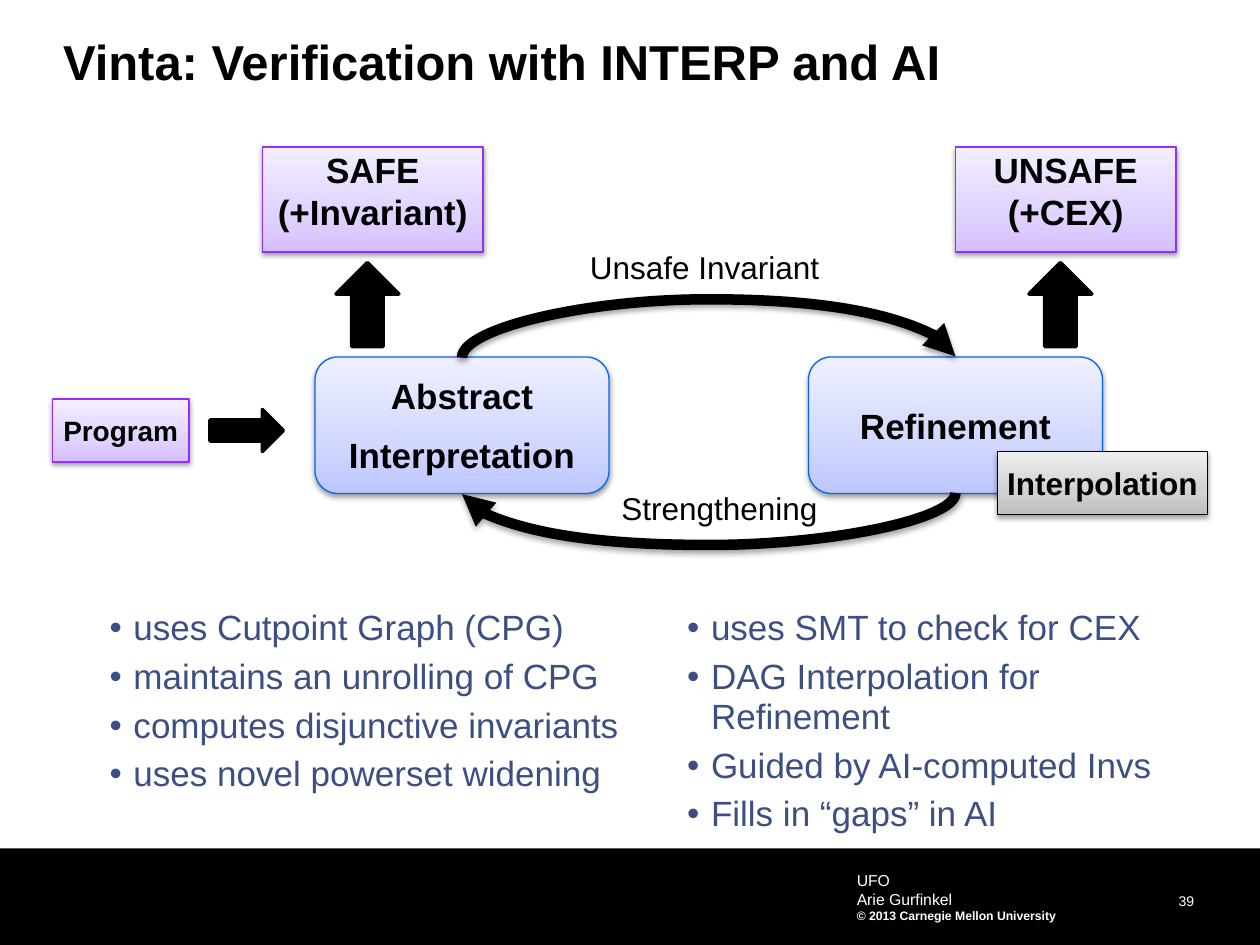
from copy import deepcopy

from lxml.etree import SubElement
from pptx import Presentation
from pptx.dml.color import RGBColor
from pptx.enum.shapes import MSO_CONNECTOR as Link, MSO_SHAPE as Shape
from pptx.enum.text import MSO_ANCHOR as Anchor, MSO_AUTO_SIZE as Fit, PP_ALIGN as Align
from pptx.oxml.ns import qn
from pptx.util import Inches, Pt

CELL = Inches(1) / 12  # the slide is a grid of 120 x 90 cells
BLACK, WHITE, NAVY = "000000", "FFFFFF", "3C4F82"

# Gradient colours from bottom to top, then the outline
BLUE = ("BDC6FF", "D1D7FF", "EEF0FF", "0064F9")
PURPLE = ("D4BFFF", "E0D2FF", "F3EEFF", "962DFE")
GRAY = ("BDBDBD", "D1D1D1", "EEEEEE", BLACK)


def rgb(code):
    return RGBColor.from_string(code)


def cells(*counts):
    return [round(count * CELL) for count in counts]


def apply(target, values):
    for name, value in values.items():
        setattr(target, name, value)


def add_node(parent, tag, **attributes):
    return SubElement(parent, qn(tag), {k: str(v) for k, v in attributes.items()})


def add_shadow(effects, opacity, distance):
    shadow = add_node(effects, "a:outerShdw", blurRad=40000, dist=distance,
                      dir=5400000, rotWithShape=0)
    color = add_node(shadow, "a:srgbClr", val=BLACK)
    add_node(color, "a:alpha", val=opacity * 1000)


def write(frame, lines, size, color=BLACK, bold=False, paragraph=None,
          gap=0, margin=0, bullet=False, **frame_values):
    """Fill a text frame; gap is the space between paragraphs in points."""
    sides = ("left", "top", "right", "bottom")
    apply(frame, {f"margin_{side}": Inches(margin) for side in sides})
    apply(frame, {"auto_size": Fit.NONE, "word_wrap": True, **frame_values})
    for i, line in enumerate(lines):
        par = frame.paragraphs[0] if i == 0 else frame.add_paragraph()
        par.text = line
        apply(par, paragraph or {})
        if i and gap:
            par.space_before = Pt(gap)
        if bullet:
            props = par._p.get_or_add_pPr()
            props.set("marL", str(Inches(0.31)))
            props.set("indent", str(Inches(-0.19)))
            add_node(props, "a:buFont", typeface="Arial")
            add_node(props, "a:buChar", char="•")
        apply(par.font, {"name": "Arial", "size": Pt(size), "bold": bold})
        par.font.color.rgb = rgb(color)


def add_text(slide, place, lines, size, **style):
    box = slide.shapes.add_textbox(*cells(*place))
    write(box.text_frame, lines, size, **style)
    return box


def add_solid(slide, kind, place, outline=0, rotation=0):
    shape = slide.shapes.add_shape(kind, *cells(*place))
    shape.shadow.inherit = False
    shape.rotation = rotation
    shape.fill.solid()
    shape.fill.fore_color.rgb = rgb(BLACK)
    if outline:
        shape.line.color.rgb = rgb(BLACK)
        shape.line.width = Pt(outline)
    else:
        shape.line.fill.background()


def add_box(slide, kind, place, palette, lines, size=20, line_height=None):
    """Shaded box with centred bold text."""
    box = slide.shapes.add_shape(kind, *cells(*place))
    *shades, outline = palette
    box.fill.gradient()
    box.fill.gradient_angle = 90
    stop_list = box._element.spPr.find(qn("a:gradFill")).find(qn("a:gsLst"))
    stop_list.insert(1, deepcopy(stop_list[0]))
    for stop, shade, position in zip(box.fill.gradient_stops, shades, (0, 0.35, 1)):
        stop.color.rgb = rgb(shade)
        stop.position = position
    box.line.color.rgb = rgb(outline)
    box.line.width = Pt(0.75)
    box.shadow.inherit = False
    add_shadow(box._element.spPr.find(qn("a:effectLst")), 38, 20000)
    paragraph = {"alignment": Align.CENTER}
    if line_height:
        paragraph["line_spacing"] = Pt(line_height)
    write(box.text_frame, lines, size, bold=True, gap=size / 2, paragraph=paragraph,
          vertical_anchor=Anchor.MIDDLE, word_wrap=False)


def add_loop_arrow(slide, left, right, y, bulge, upward):
    """Curved arrow between two points at one height, bulging by some inches."""
    thickness, span = Inches(0.01), round((right - left) * CELL)
    center_x, center_y = cells((left + right) / 2, y)
    x, top = center_x - thickness // 2, center_y - span // 2
    ends = (x, top, x + thickness, top + span)
    if upward:
        ends = ends[2:] + ends[:2]
    arrow = slide.shapes.add_connector(Link.CURVE, *ends)
    arrow.line.color.rgb = rgb(BLACK)
    arrow.line.width = Pt(6)
    props = arrow._element.spPr
    # The upright curve is turned a quarter, so its width becomes its height
    props.find(qn("a:xfrm")).set("rot", "5400000")
    guides = props.find(qn("a:prstGeom")).get_or_add_avLst()
    add_node(guides, "a:gd", name="adj1", fmla=f"val {round(bulge / 0.01 * 100000)}")
    add_node(props.find(qn("a:ln")), "a:tailEnd", type="triangle")
    add_shadow(add_node(props, "a:effectLst"), 35, 23000)


def add_footer(slide):
    add_solid(slide, Shape.RECTANGLE, (0, 80.8, 120, 9.2))
    add_text(slide, (102.75, 84.4, 11, 2.2), ["39"], 8, color=WHITE,
             vertical_anchor=Anchor.MIDDLE,
             paragraph={"alignment": Align.RIGHT, "line_spacing": Pt(13)})
    credit = add_text(slide, (81, 82.3, 30, 6.3),
                      ["UFO", "Arie Gurfinkel", "© 2013 Carnegie Mellon University"],
                      9, color=WHITE, margin=0.05)
    apply(credit.text_frame.paragraphs[-1].font, {"size": Pt(7), "bold": True})


def add_title(slide, text):
    title = slide.shapes.title
    apply(title, dict(zip(("left", "top", "width", "height"), cells(6, 3.6, 108, 5))))
    write(title.text_frame, [text], 28, bold=True, vertical_anchor=Anchor.TOP,
          paragraph={"alignment": Align.LEFT, "line_spacing": 0.9})


def main():
    deck = Presentation()
    deck.slide_width, deck.slide_height = cells(120, 90)
    slide = deck.slides.add_slide(deck.slide_layouts[5])
    add_footer(slide)
    add_title(slide, "Vinta: Verification with INTERP and AI")

    # Notes under each stage
    notes = {
        9: ["uses Cutpoint Graph (CPG)", "maintains an unrolling of CPG",
            "computes disjunctive invariants", "uses novel powerset widening"],
        64: ["uses SMT to check for CEX", "DAG Interpolation for Refinement",
             "Guided by AI-computed Invs", "Fills in “gaps” in AI"],
    }
    for column, lines in notes.items():
        add_text(slide, (column, 58, 53, 20), lines, 20, color=NAVY, bullet=True,
                 paragraph={"line_spacing": 0.95, "space_after": Pt(5)})

    # The two stages and the loop between them
    for column, lines in ((30, ["Abstract", "Interpretation"]), (77, ["Refinement"])):
        add_box(slide, Shape.ROUNDED_RECTANGLE, (column, 34, 28, 13), BLUE, lines)
    add_loop_arrow(slide, 44, 91, 34, 0.47, upward=True)
    add_loop_arrow(slide, 44, 91, 47, 0.42, upward=False)

    # Input
    add_box(slide, Shape.RECTANGLE, (5, 38, 13, 6), PURPLE, ["Program"], 16)
    add_solid(slide, Shape.RIGHT_ARROW, (20, 39, 7, 4), outline=2)

    # Outcomes above the stages
    for column, lines in ((25, ["SAFE", "(+Invariant)"]), (91, ["UNSAFE", "(+CEX)"])):
        add_solid(slide, Shape.RIGHT_ARROW, (column + 6, 26, 8, 6), 2, rotation=270)
        add_box(slide, Shape.RECTANGLE, (column, 14, 21, 10), PURPLE, lines,
                line_height=14)

    # Method tag and loop labels
    add_box(slide, Shape.RECTANGLE, (95, 43, 20, 6), GRAY, ["Interpolation"], 18)
    for place, label in (((55, 23, 24.5, 4.8), "Unsafe Invariant"),
                         ((58, 46, 21.2, 4.8), "Strengthening")):
        add_text(slide, place, [label], 18, margin=0.1, word_wrap=False,
                 margin_top=Inches(0.05), margin_bottom=Inches(0.05))

    deck.save("out.pptx")


if __name__ == "__main__":
    main()
